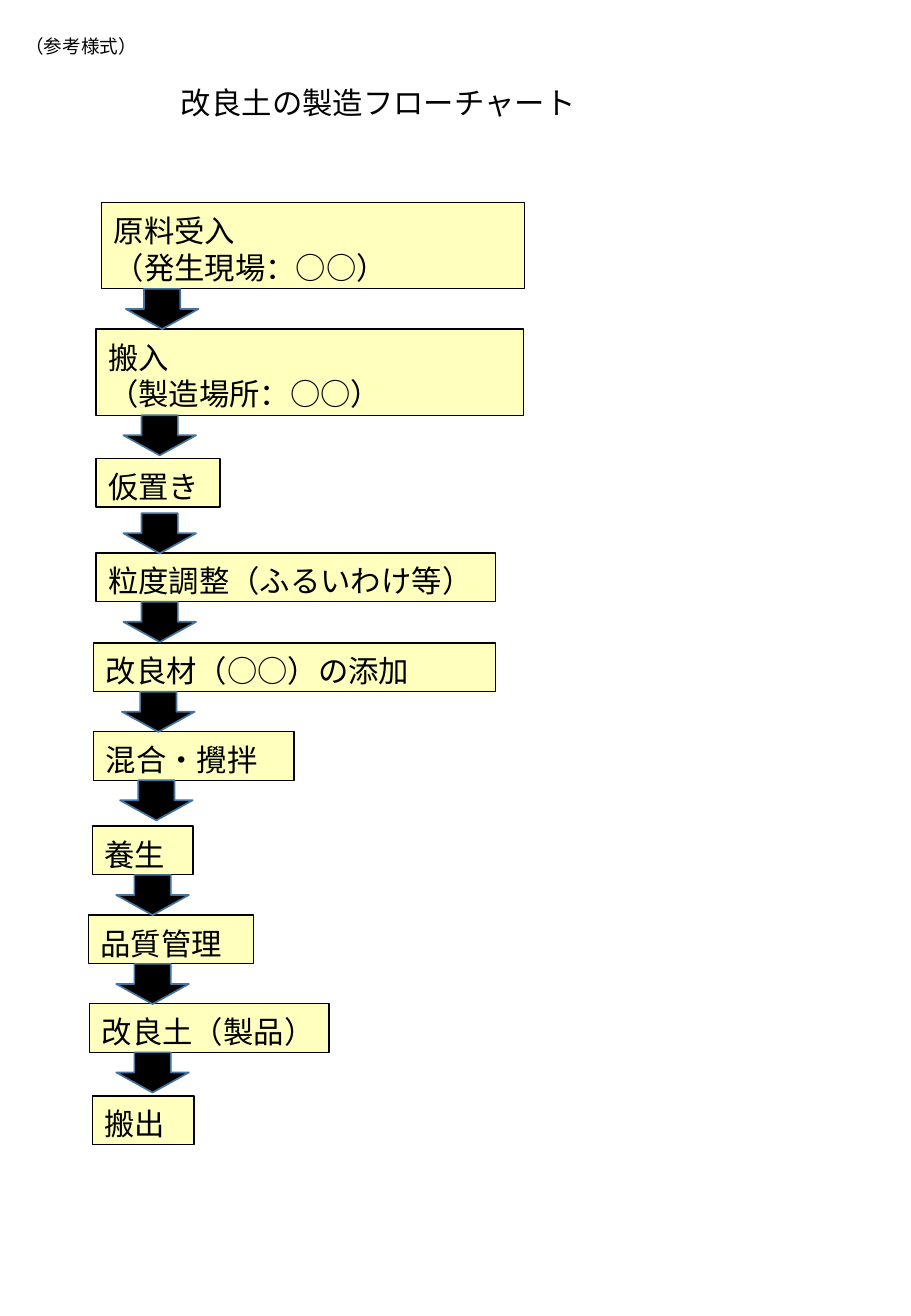
from pptx import Presentation
from pptx.dml.color import RGBColor
from pptx.enum import shapes, text
from pptx.oxml.ns import qn
from pptx.util import Cm, Pt

FONT = "Noto Sans CJK JP"
INK, CREAM, BLUE = "000000", "FFFFBE", "43739E"
ARROW_LENGTH, ARROW_SPAN = 0.84, 1.52
ONE_LINE, TWO_LINES = 1.02, 1.8

# lines, left, top, width, height (cm)
STEPS = [
    (["原料受入", "（発生現場：○○）"], 2.13, 4.24, 8.84, TWO_LINES),
    (["搬入", "（製造場所：○○）"], 2.01, 6.88, 8.94, TWO_LINES),
    (["仮置き"], 2.01, 9.58, 2.59, ONE_LINE),
    (["粒度調整（ふるいわけ等）"], 2.01, 11.56, 8.36, ONE_LINE),
    (["改良材（○○）の添加"], 1.96, 13.44, 8.41, ONE_LINE),
    (["混合・攪拌"], 1.96, 15.29, 4.19, ONE_LINE),
    (["養生"], 1.93, 17.27, 2.11, ONE_LINE),
    (["品質管理"], 1.85, 19.13, 3.45, ONE_LINE),
    (["改良土（製品）"], 1.88, 20.98, 5.0, ONE_LINE),
    (["搬出"], 1.93, 22.91, 2.13, ONE_LINE),
]
# centre of the arrow below each step, and its gap from that step (cm)
ARROWS = [(3.39, 0), (3.34, 0), (3.34, 0.13), (3.34, 0), (3.31, 0),
          (3.27, 0), (3.19, 0), (3.19, 0), (3.19, 0)]


def rgb(hex_colour):
    return RGBColor.from_string(hex_colour)


def write(shape, lines, size=18):
    frame = shape.text_frame
    frame.text = "\n".join(lines)
    frame.word_wrap = True
    frame.auto_size = text.MSO_AUTO_SIZE.SHAPE_TO_FIT_TEXT
    frame.vertical_anchor = text.MSO_ANCHOR.TOP
    frame.margin_top, frame.margin_bottom = Cm(0.2), Cm(0.05)
    for paragraph in frame.paragraphs:
        paragraph.alignment = text.PP_ALIGN.LEFT
        paragraph.line_spacing = Pt(size * 1.2)
        font = paragraph.font
        font.size, font.name = Pt(size), FONT
        font.color.rgb = rgb(INK)
        east_asian = paragraph._p.pPr.find(qn("a:defRPr")).makeelement(
            qn("a:ea"), {"typeface": FONT})
        paragraph._p.pPr.find(qn("a:defRPr")).append(east_asian)


def paint(shape, fill, line, width):
    shape.shadow.inherit = False
    shape.fill.solid()
    shape.fill.fore_color.rgb = rgb(fill)
    shape.line.color.rgb = rgb(line)
    shape.line.width = Pt(width)


def add_title(slide, words, left, top, width, height):
    title = slide.shapes.title
    title.left, title.top = Cm(left), Cm(top)
    title.width, title.height = Cm(width), Cm(height)
    write(title, [words])


def add_step(slide, lines, left, top, width, height):
    step = slide.shapes.add_shape(shapes.MSO_SHAPE.RECTANGLE, Cm(left),
                                  Cm(top), Cm(width), Cm(height))
    paint(step, CREAM, INK, 0.75)
    write(step, lines)


def add_down_arrow(slide, centre, top):
    """Turn a right arrow a quarter so that its tail starts at top."""
    arrow = slide.shapes.add_shape(
        shapes.MSO_SHAPE.RIGHT_ARROW, Cm(centre - ARROW_LENGTH / 2),
        Cm(top - (ARROW_SPAN - ARROW_LENGTH) / 2),
        Cm(ARROW_LENGTH), Cm(ARROW_SPAN))
    arrow.rotation = 90
    paint(arrow, INK, BLUE, 1)


def add_label(slide, words, left, top, width, height):
    label = slide.shapes.add_textbox(Cm(left), Cm(top), Cm(width), Cm(height))
    write(label, [words], 11)


def main():
    deck = Presentation()
    deck.slide_width, deck.slide_height = Cm(19.05), Cm(27.51)
    slide = deck.slides.add_slide(deck.slide_layouts.get_by_name("Title Only"))
    add_title(slide, "改良土の製造フローチャート", 3.53, 1.55, 12.4, ONE_LINE)
    for step in STEPS:
        add_step(slide, *step)
    for (_, _, top, _, height), (centre, gap) in zip(STEPS, ARROWS):
        add_down_arrow(slide, centre, top + height + gap)
    add_label(slide, "（参考様式）", 0.28, 0.53, 4.34, 0.73)
    deck.save("out.pptx")


if __name__ == "__main__":
    main()
